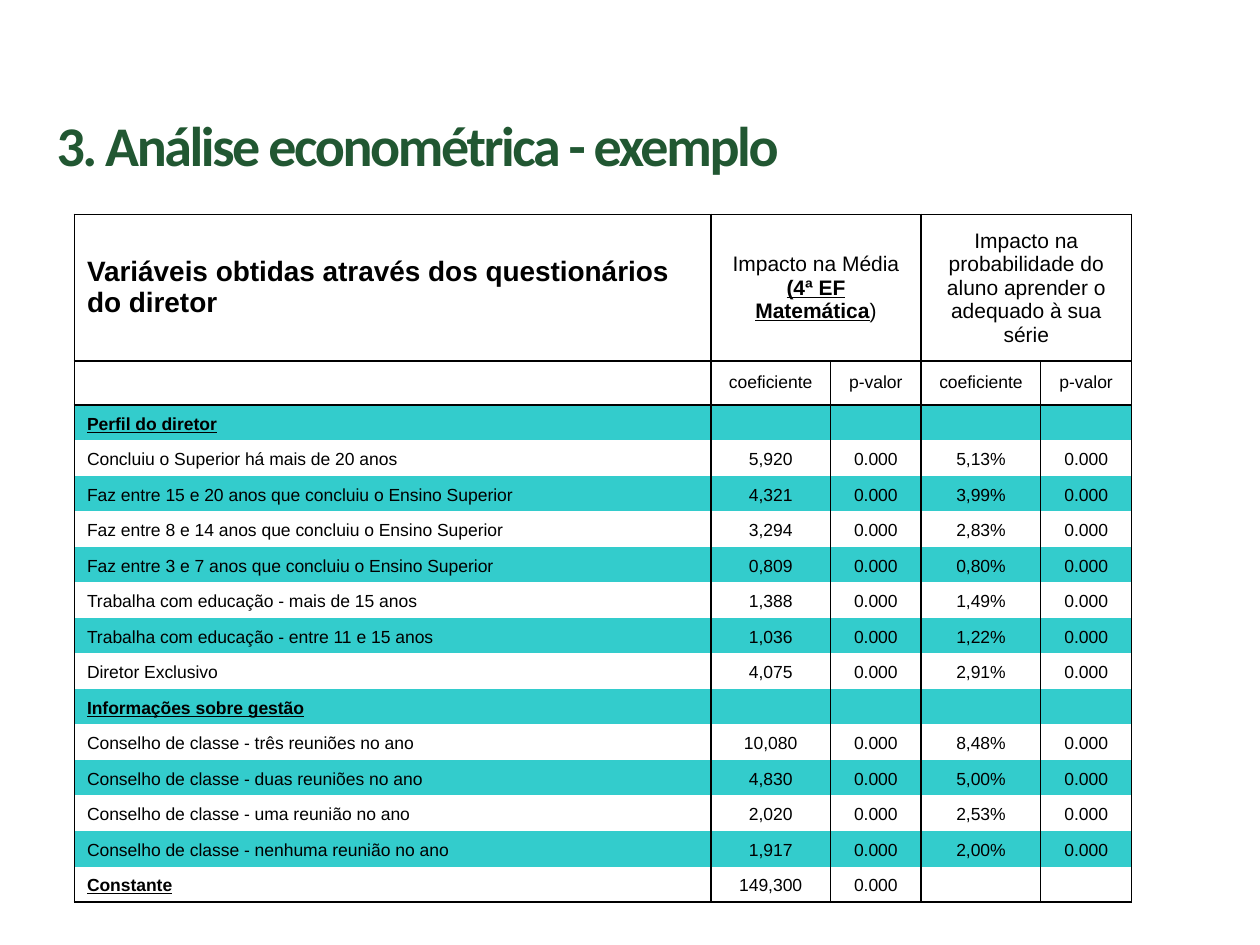
import dataclasses
import lxml.etree
import pptx
import pptx.dml.color
import pptx.enum.text
import pptx.oxml.ns
import pptx.util

Cm = pptx.util.Cm
Pt = pptx.util.Pt
Align = pptx.enum.text.PP_ALIGN
Anchor = pptx.enum.text.MSO_ANCHOR
qn = pptx.oxml.ns.qn


@dataclasses.dataclass(frozen=True)
class Theme:
    green: str = "215732"
    band: str = "33CCCC"
    ink: str = "000000"
    head: str = "Calibri"
    body: str = "Arial"
    title: int = 32
    lead: int = 16
    group: int = 12
    small: int = 10
    plain: str = "{2D5ABB26-0587-4C30-8999-92F81FD0307C}"


def color(code):
    return pptx.dml.color.RGBColor.from_string(code)


class Deck:
    def __init__(self, theme):
        self.theme = theme
        self.file = pptx.Presentation()
        self.file.slide_width = Cm(25.4)
        self.file.slide_height = Cm(19.05)
        self.slide = self.file.slides.add_slide(self.file.slide_layouts[6])

    def font(self, para, name, size, code, bold=False, line=False):
        font = para.font
        font.name, font.size = name, Pt(size)
        font.bold, font.underline = bold, line
        font.color.rgb = color(code)

    def title(self, text, left, top, width, height):
        box = self.slide.shapes.add_textbox(Cm(left), Cm(top), Cm(width), Cm(height))
        frame = box.text_frame
        frame.word_wrap = True
        frame.vertical_anchor = Anchor.BOTTOM
        para = frame.paragraphs[0]
        para.line_spacing = Pt(38)
        self.font(para, self.theme.head, self.theme.title, self.theme.green, True)
        run = para.add_run()
        run.text = text
        run._r.get_or_add_rPr().set("spc", "-140")

    def table(self, left, top, cols, rows):
        shape = self.slide.shapes.add_table(
            len(rows), len(cols), Cm(left), Cm(top), Cm(sum(cols)), Cm(sum(rows)))
        table = shape.table
        table.first_row = table.horz_banding = False
        table._tbl.tblPr.find(qn("a:tableStyleId")).text = self.theme.plain
        for col, width in zip(table.columns, cols):
            col.width = Cm(width)
        for row, height in zip(table.rows, rows):
            row.height = Cm(height)
        return table

    def border(self, cell, sides):
        props = cell._tc.get_or_add_tcPr()
        for side in sides:
            line = lxml.etree.SubElement(props, qn("a:ln" + side), w=str(Pt(1)))
            fill = lxml.etree.SubElement(line, qn("a:solidFill"))
            lxml.etree.SubElement(fill, qn("a:srgbClr"), val=self.theme.ink)

    def paint(self, cell, code):
        if code:
            cell.fill.solid()
            cell.fill.fore_color.rgb = color(code)
        else:
            cell.fill.background()

    def label(self, cell, text, size, align=Align.LEFT, anchor=Anchor.MIDDLE,
              bold=False, line=False):
        cell.vertical_anchor = anchor
        para = cell.text_frame.paragraphs[0]
        para.alignment = align
        self.font(para, self.theme.body, size, self.theme.ink, bold, line)
        if text:
            para.add_run().text = text
        else:
            para._p.get_or_add_endParaRPr().set("sz", str(size * 100))
        return para

    def save(self):
        self.file.save("out.pptx")


ROWS = [
    ("Perfil do diretor",),
    ("Concluiu o Superior há mais de 20 anos", "5,920", "5,13%"),
    ("Faz entre 15 e 20 anos que concluiu o Ensino Superior", "4,321", "3,99%"),
    ("Faz entre 8 e 14 anos que concluiu o Ensino Superior", "3,294", "2,83%"),
    ("Faz entre 3 e 7 anos que concluiu o Ensino Superior", "0,809", "0,80%"),
    ("Trabalha com educação - mais de 15 anos", "1,388", "1,49%"),
    ("Trabalha com educação - entre 11 e 15 anos", "1,036", "1,22%"),
    ("Diretor Exclusivo", "4,075", "2,91%"),
    ("Informações sobre gestão",),
    ("Conselho de classe - três reuniões no ano", "10,080", "8,48%"),
    ("Conselho de classe - duas reuniões no ano", "4,830", "5,00%"),
    ("Conselho de classe - uma reunião no ano", "2,020", "2,53%"),
    ("Conselho de classe - nenhuma reunião no ano", "1,917", "2,00%"),
    ("Constante", "149,300"),
]


def sides(row, col, last):
    tests = {
        "L": col in (0, 1, 3),
        "R": col in (0, 2, 4) or row == 0,
        "T": row in (0, 1),
        "B": row in (0, last),
    }
    return [side for side, drawn in tests.items() if drawn]


def main():
    theme = Theme()
    deck = Deck(theme)
    deck.title("3. Análise econométrica - exemplo", 0.89, 0.33, 18, 3.38)

    tall, sub, total = 2.96, 0.88, 13.87
    step = (total - tall - sub) / len(ROWS)
    grid = deck.table(1.5, 4.32, [12.83, 2.41, 1.83, 2.41, 1.83],
                      [tall, sub] + [step] * len(ROWS))
    last = len(ROWS) + 1
    for row in range(last + 1):
        for col in range(5):
            cell = grid.cell(row, col)
            deck.border(cell, sides(row, col, last))
            deck.paint(cell, theme.band if row > 1 and row % 2 == 0 else None)

    for col in (1, 3):
        grid.cell(0, col).merge(grid.cell(0, col + 1))
    deck.label(grid.cell(0, 0), "Variáveis obtidas através dos questionários do diretor",
               theme.lead, bold=True)
    mean = deck.label(grid.cell(0, 1), "Impacto na Média ", theme.group, Align.CENTER)
    for text, strong in (("(4ª EF Matemática", True), (")", False)):
        run = mean.add_run()
        run.text = text
        run.font.bold = run.font.underline = strong
    deck.label(grid.cell(0, 3),
               "Impacto na probabilidade do aluno aprender o adequado à sua série",
               theme.group, Align.CENTER)

    for col, text in enumerate(("", "coeficiente", "p-valor", "coeficiente", "p-valor")):
        deck.label(grid.cell(1, col), text, theme.small, Align.CENTER)

    for row, (name, *values) in enumerate(ROWS, 2):
        strong = len(values) < 2
        deck.label(grid.cell(row, 0), name, theme.small, anchor=Anchor.BOTTOM,
                   bold=strong, line=strong)
        texts = [text for value in values for text in (value, "0.000")]
        texts += [""] * (4 - len(texts))
        for col, text in enumerate(texts, 1):
            deck.label(grid.cell(row, col), text, theme.small, Align.CENTER, Anchor.BOTTOM)
    deck.save()


if __name__ == "__main__":
    main()
